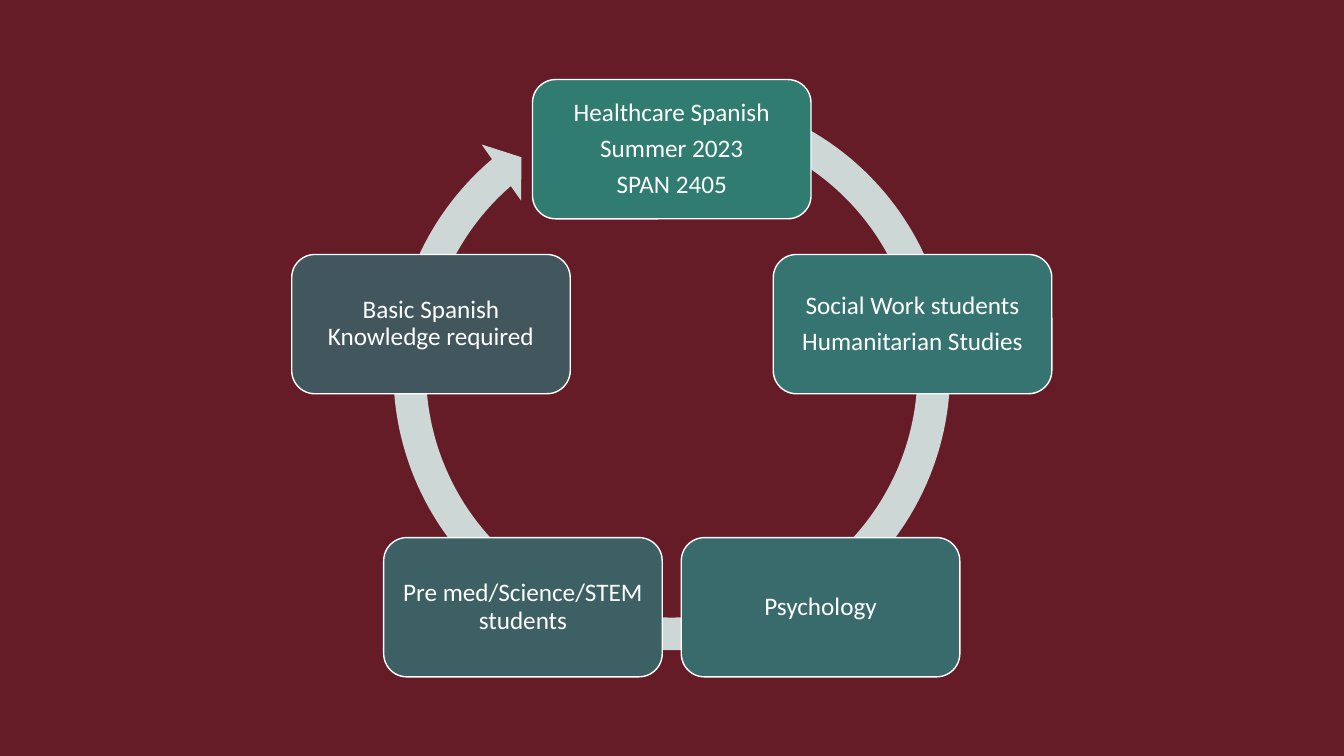
"""Build a slide with a five-step cycle about a healthcare Spanish course."""
from math import cos, radians, sin

from pptx import Presentation
from pptx.dml.color import RGBColor
from pptx.enum.shapes import MSO_SHAPE as Shape
from pptx.enum.text import MSO_ANCHOR as Anchor, PP_ALIGN as Align
from pptx.util import Cm, Pt

MAROON = RGBColor(0x65, 0x1C, 0x27)
MIST = RGBColor(0xCD, 0xD7, 0xD5)
WHITE = RGBColor(0xFF, 0xFF, 0xFF)
STEPS = [
    (["Healthcare Spanish", "Summer 2023", "SPAN 2405"], RGBColor(0x30, 0x7C, 0x71)),
    (["Social Work students", "Humanitarian Studies"], RGBColor(0x35, 0x74, 0x70)),
    (["Psychology"], RGBColor(0x39, 0x6A, 0x6C)),
    (["Pre med/Science/STEM students"], RGBColor(0x3D, 0x60, 0x64)),
    (["Basic Spanish Knowledge required"], RGBColor(0x41, 0x57, 0x5D)),
]
CENTER_X, CENTER_Y, RADIUS = 16.93, 10.14, 6.38
BOX_WIDTH, BOX_HEIGHT = 7.02, 3.51
RING_TOP, RING_SIZE = 1.9, 14.94


def write_lines(frame, lines, size, color, font_name):
    for index, line in enumerate(lines):
        para = frame.paragraphs[0] if index == 0 else frame.add_paragraph()
        para.alignment = Align.CENTER
        para.line_spacing = 0.9
        if index:
            para.space_before = Pt(size * 0.35)
        span = para.add_run()
        span.text = line
        span.font.name = font_name
        span.font.size = Pt(size)
        span.font.color.rgb = color


deck = Presentation()
deck.slide_width, deck.slide_height = Cm(33.87), Cm(19.05)
page = deck.slides.add_slide(deck.slide_layouts.get_by_name("Blank"))
page.background.fill.solid()
page.background.fill.fore_color.rgb = MAROON

ring = page.shapes.add_shape(
    Shape.CIRCULAR_ARROW, Cm(CENTER_X - RING_SIZE / 2), Cm(RING_TOP), Cm(RING_SIZE), Cm(RING_SIZE)
)
for index, value in enumerate([0.055, 3.307, 137.676, 173.91, 0.058]):
    ring.adjustments[index] = value
ring.shadow.inherit = False
ring.fill.solid()
ring.fill.fore_color.rgb = MIST
ring.line.fill.background()

for step, (lines, color) in enumerate(STEPS):
    angle = radians(step * 360 / len(STEPS))
    left = CENTER_X + RADIUS * sin(angle) - BOX_WIDTH / 2
    top = CENTER_Y - RADIUS * cos(angle) - BOX_HEIGHT / 2
    box = page.shapes.add_shape(
        Shape.ROUNDED_RECTANGLE, Cm(left), Cm(top), Cm(BOX_WIDTH), Cm(BOX_HEIGHT)
    )
    box.shadow.inherit = False
    box.fill.solid()
    box.fill.fore_color.rgb = color
    box.line.color.rgb = WHITE
    box.line.width = Pt(1)
    frame = box.text_frame
    frame.word_wrap = True
    frame.vertical_anchor = Anchor.MIDDLE
    frame.margin_left = frame.margin_right = Cm(0.18)
    frame.margin_top = frame.margin_bottom = Cm(0.18)
    write_lines(frame, lines, size=18, color=WHITE, font_name="Calibri")

deck.save("out.pptx")
